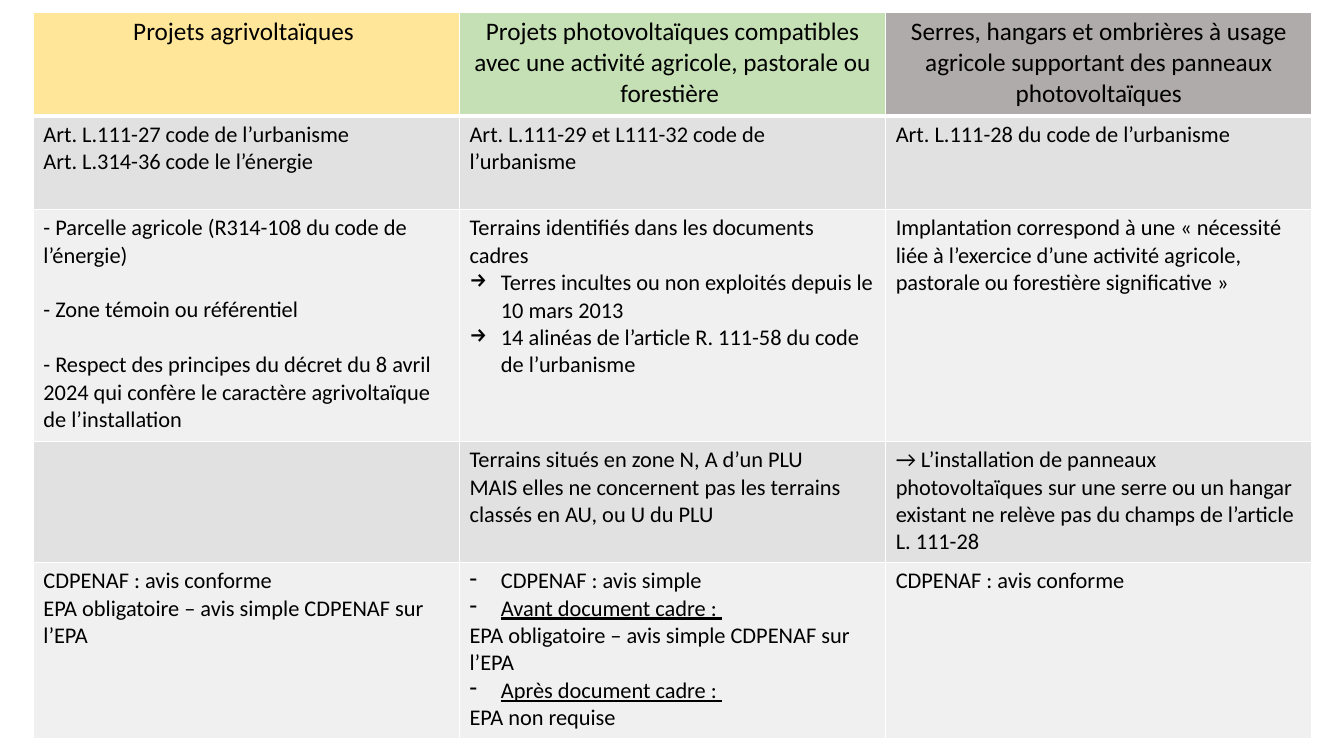
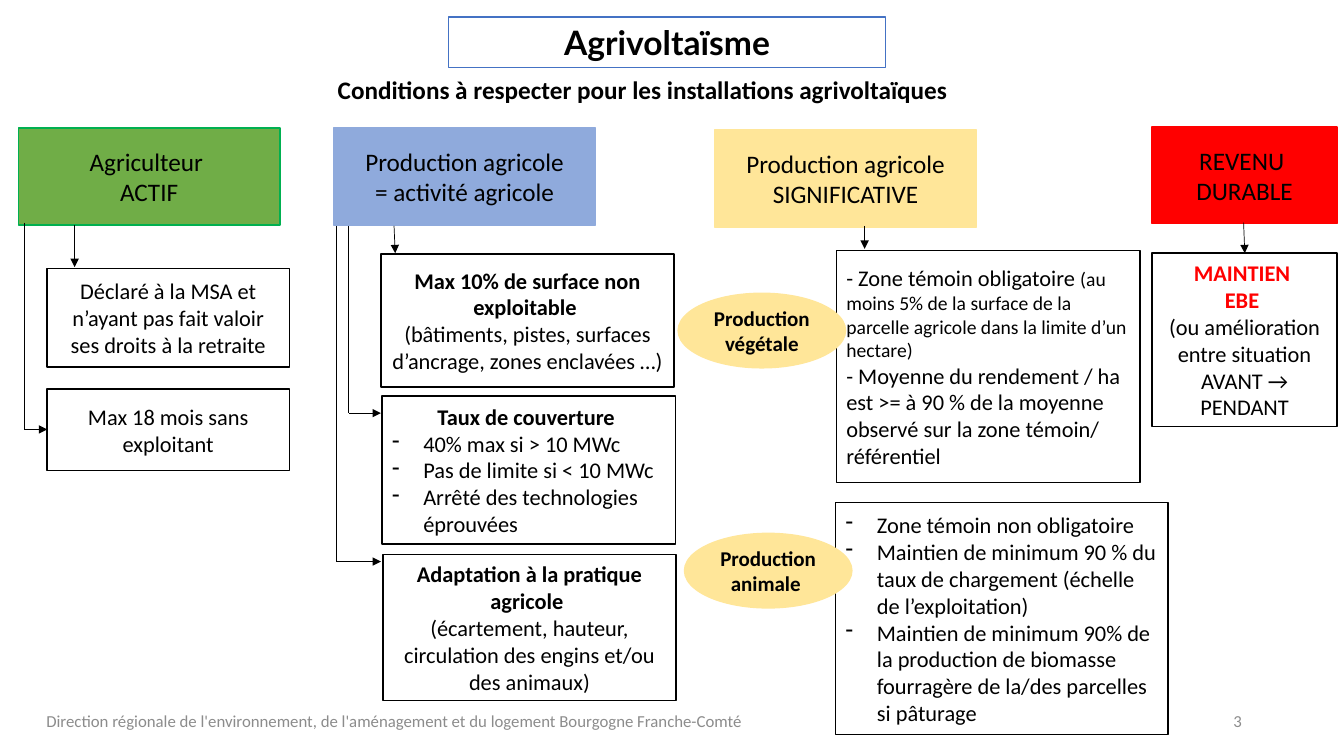
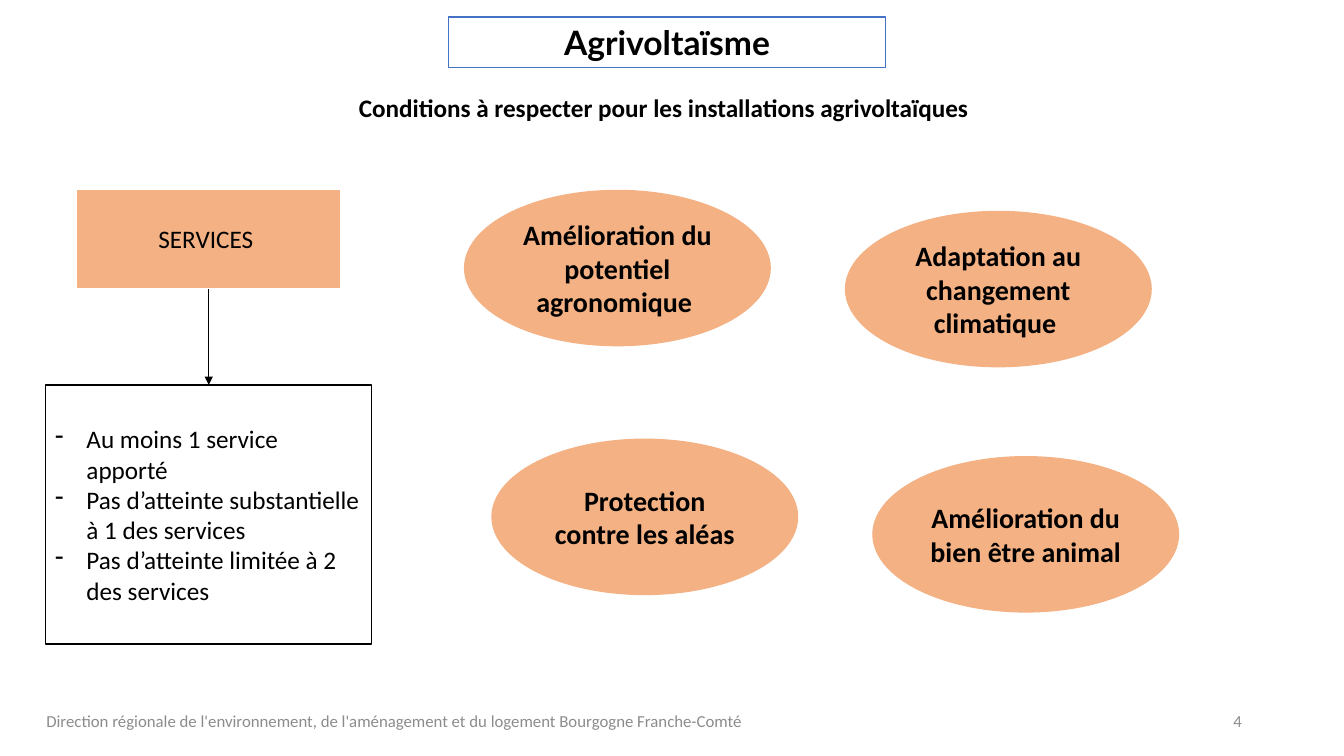
from dataclasses import dataclass
from itertools import pairwise

from lxml import etree
from pptx import Presentation
from pptx.dml.color import RGBColor
from pptx.enum import shapes, text
from pptx.oxml import ns
from pptx.util import Cm, Pt


@dataclass(frozen=True)
class Theme:
    font: str = "Calibri"
    title_font: str = "Lato"
    black: str = "000000"
    white: str = "FFFFFF"
    muted: str = "8C8C8C"
    blue: str = "4472C4"
    green: str = "70AD47"
    green_line: str = "00B050"
    sky: str = "8FAADC"
    yellow: str = "FFE699"
    red: str = "FF0000"
    orange: str = "F4B183"
    headers: tuple = ("FFE699", "C5E0B4", "AFABAB")
    bands: tuple = ("E1E1E1", "F0F0F0")
    title: int = 24
    service: int = 20
    head: int = 18
    body: int = 16
    oval: int = 15
    detail: int = 14
    footer: int = 12


T = Theme()
RECT, OVAL = shapes.MSO_SHAPE.RECTANGLE, shapes.MSO_SHAPE.OVAL
CENTER, LEFT, RIGHT = text.PP_ALIGN.CENTER, text.PP_ALIGN.LEFT, text.PP_ALIGN.RIGHT
TOP, MIDDLE = text.MSO_ANCHOR.TOP, text.MSO_ANCHOR.MIDDLE

# A paragraph is a string, or a pair of a string and its own format.
DASH = {"bullet": "-", "align": LEFT}
ARROW = {"bullet": "→"}
BOLD = {"bold": True}
GAP = {"before": 19.5}
ALERT = {"bold": True, "color": T.red}

TITLE = "Agrivoltaïsme"
SUBTITLE = "Conditions à respecter pour les installations agrivoltaïques "
FOOTER = ("Direction régionale de l'environnement, de l'aménagement et du logement "
          "Bourgogne Franche-Comté")

TABLE_AT = (0.84, 0.3)
COLUMN_WIDTH = 10.74
ROW_HEIGHTS = (2.62, 2.36, 5.84, 3.05, 4.45)
ROWS = [
    [["Projets agrivoltaïques "],
     ["Projets photovoltaïques compatibles avec une activité agricole, pastorale ou forestière "],
     ["Serres, hangars et ombrières à usage agricole supportant des panneaux photovoltaïques"]],
    [["Art. L.111-27 code de l’urbanisme", "Art. L.314-36 code le l’énergie"],
     ["Art. L.111-29 et L111-32 code de l’urbanisme"],
     ["Art. L.111-28 du code de l’urbanisme"]],
    [["- Parcelle agricole (R314-108 du code de l’énergie)",
      ("- Zone témoin ou référentiel", GAP),
      ("- Respect des principes du décret du 8 avril 2024 qui confère le caractère "
       "agrivoltaïque de l’installation", GAP)],
     ["Terrains identifiés dans les documents cadres",
      ("Terres incultes ou non exploités depuis le 10 mars 2013", ARROW),
      ("14 alinéas de l’article R. 111-58 du code de l’urbanisme", ARROW)],
     ["Implantation correspond à une « nécessité liée à l’exercice d’une activité "
      "agricole, pastorale ou forestière significative »"]],
    [[],
     ["Terrains situés en zone N, A d’un PLU",
      "MAIS elles ne concernent pas les terrains classés en AU, ou U du PLU"],
     ["→ L’installation de panneaux photovoltaïques sur une serre ou un hangar existant "
      "ne relève pas du champs de l’article L. 111-28"]],
    [["CDPENAF : avis conforme", "EPA obligatoire – avis simple CDPENAF sur l’EPA"],
     [("CDPENAF : avis simple", DASH),
      ("Avant document cadre : ", DASH | {"underline": True}),
      "EPA obligatoire – avis simple CDPENAF sur l’EPA",
      ("Après document cadre : ", DASH | {"underline": True}),
      "EPA non requise"],
     ["CDPENAF : avis conforme"]],
]

HEAD_W, HEAD_H = 6.6, 2.44
# Place, fill, line, paragraphs
CONDITION_HEADS = [
    ((0.46, 3.23, HEAD_W, HEAD_H), T.green, T.green_line, ["Agriculteur ", "ACTIF"]),
    ((8.41, 3.23, HEAD_W, HEAD_H), T.sky, T.sky,
     ["Production agricole", "= activité agricole"]),
    ((18.01, 3.28, HEAD_W, HEAD_H), T.yellow, T.yellow,
     ["Production agricole SIGNIFICATIVE"]),
    ((29.03, 3.2, 4.67, HEAD_H), T.red, T.red, ["REVENU ", "DURABLE"]),
]
# Place, alignment, paragraphs
CONDITION_BOXES = [
    ((1.19, 6.76, 6.1, 2.49), CENTER,
     ["Déclaré à la MSA et n’ayant pas fait valoir ses droits à la retraite"]),
    ((1.19, 9.8, 6.1, 2.06), CENTER, ["Max 18 mois sans exploitant"]),
    ((9.6, 6.4, 7.39, 3.35), CENTER,
     [("Max 10% de surface non exploitable ", BOLD),
      "(bâtiments, pistes, surfaces d’ancrage, zones enclavées …)"]),
    ((9.63, 9.98, 7.39, 3.73), CENTER,
     [("Taux de couverture ", BOLD),
      ("40% max si > 10 MWc", DASH),
      ("Pas de limite si < 10 MWc", DASH),
      ("Arrêté des technologies éprouvées", DASH)]),
    ((9.65, 13.97, 7.39, 3.68), CENTER,
     [("Adaptation à la pratique agricole ", BOLD),
      "(écartement, hauteur, circulation des engins et/ou des animaux)"]),
    ((21.08, 6.32, 7.65, 5.84), LEFT,
     [("- Zone témoin obligatoire ",
       {"detail": "(au moins 5% de la surface de la parcelle agricole dans la limite "
                  "d’un hectare)"}),
      "- Moyenne du rendement / ha est >= à 90 % de la moyenne observé sur la zone "
      "témoin/ référentiel"]),
    ((21.06, 12.67, 8.38, 5.84), LEFT,
     [("Zone témoin non obligatoire", DASH),
      ("Maintien de minimum 90 % du taux de chargement (échelle de l’exploitation)", DASH),
      ("Maintien de minimum 90% de la production de biomasse fourragère de la/des "
       "parcelles si pâturage", DASH)]),
    ((29.03, 6.38, 4.67, 4.37), CENTER,
     [("MAINTIEN ", ALERT), ("EBE ", ALERT),
      "(ou amélioration entre situation AVANT → PENDANT"]),
]
PRODUCTION_OVALS = [
    ((17.09, 7.39, 4.22, 1.88), ["Production", "végétale"]),
    ((17.25, 13.44, 4.22, 1.88), ["Production ", "animale "]),
]
CONDITION_ARROWS = [
    [(1.88, 5.66), (1.88, 6.73)],
    [(0.61, 5.61), (0.61, 10.82), (1.19, 10.82)],
    [(9.93, 5.69), (9.96, 6.38)],
    [(8.79, 5.69), (8.79, 10.41), (9.6, 10.41)],
    [(8.48, 5.69), (8.48, 14.15), (9.6, 14.15)],
    [(21.79, 5.69), (21.79, 6.27)],
    [(31.34, 5.61), (31.37, 6.38)],
]

SERVICES_HEAD = (1.96, 4.8, HEAD_W, HEAD_H)
SERVICES_BOX = (1.14, 9.7, 8.23, 6.53)
SERVICES_ARROW = [(5.26, 7.29), (5.26, 9.7)]
SERVICES_RULES = ["Au moins 1 service apporté",
                  "Pas d’atteinte substantielle à 1 des services",
                  "Pas d’atteinte limitée à 2 des services"]
SERVICE_SIZE = (7.7, 3.91)
SERVICES = [
    ((11.71, 4.8), "Amélioration du potentiel agronomique "),
    ((21.31, 5.33), "Adaptation au changement climatique "),
    ((12.4, 11.07), "Protection contre les aléas"),
    ((22, 11.51), "Amélioration du bien être animal "),
]


def rgb(color):
    return RGBColor.from_string(color)


def cm(values):
    return [Cm(v) for v in values]


def sub(parent, tag, **attrs):
    return etree.SubElement(parent, ns.qn(tag), attrs)


def add_run(p, content, size, font, color, bold, underline):
    r = p.add_run()
    r.text = content
    r.font.size, r.font.name = Pt(size), font
    r.font.bold, r.font.underline = bold, underline
    r.font.color.rgb = rgb(color)


def write(tf, paragraphs, anchor=MIDDLE, **base):
    """Fill a text frame; base is the format a paragraph may override."""
    tf.word_wrap = True
    tf.vertical_anchor = anchor
    for i, item in enumerate(paragraphs):
        content, own = (item, {}) if isinstance(item, str) else item
        f = {"size": T.body, "font": T.font, "color": T.black, "bold": False,
             "underline": False, "align": LEFT} | base | own
        p = tf.paragraphs[0] if i == 0 else tf.add_paragraph()
        p.alignment = f["align"]
        if "before" in f:
            p.space_before = Pt(f["before"])
        if "bullet" in f:
            pPr = p._p.get_or_add_pPr()
            pPr.set("marL", str(Cm(0.79)))
            pPr.set("indent", str(-Cm(0.79)))
            sub(pPr, "a:buChar", char=f["bullet"])
        look = {k: f[k] for k in ("font", "color", "bold", "underline")}
        add_run(p, content, f["size"], **look)
        if "detail" in f:
            add_run(p, f["detail"], T.detail, **look)


def add_text(s, at, content, **fmt):
    write(s.shapes.add_textbox(*cm(at)).text_frame, [content], **fmt)


def add_box(s, at, paragraphs, kind=RECT, fill=T.white, line=T.black, **fmt):
    sp = s.shapes.add_shape(kind, *cm(at))
    sp.shadow.inherit = False
    sp.fill.solid()
    sp.fill.fore_color.rgb = rgb(fill)
    sp.line.color.rgb = rgb(line)
    sp.line.width = Pt(1)
    write(sp.text_frame, paragraphs, **{"align": CENTER} | fmt)


def add_arrow(s, points):
    """Join the points with straight lines; the last one carries the arrowhead."""
    for start, end in pairwise(points):
        c = s.shapes.add_connector(shapes.MSO_CONNECTOR.STRAIGHT, *cm(start + end))
        c.line.color.rgb = rgb(T.black)
        c.line.width = Pt(0.5)
        if end == points[-1]:
            sub(c.line._get_or_add_ln(), "a:tailEnd", type="triangle")
        sub(c._element.spPr, "a:effectLst")


def add_borders(cell, bottom):
    tcPr = cell._tc.get_or_add_tcPr()
    for side, width in (("L", 1), ("R", 1), ("T", 1), ("B", bottom)):
        ln = sub(tcPr, f"a:ln{side}", w=str(Pt(width)))
        sub(sub(ln, "a:solidFill"), "a:srgbClr", val=T.white)


def new_slide(prs):
    return prs.slides.add_slide(prs.slide_layouts[6])


def titled_slide(prs, number, subtitle_at):
    s = new_slide(prs)
    footer = {"size": T.footer, "color": T.muted}
    add_text(s, (0.89, 17.65, 18.11, 1.02), FOOTER, align=CENTER, **footer)
    add_text(s, (23.93, 17.65, 7.62, 1.02), str(number), align=RIGHT, **footer)
    add_box(s, (11.3, 0.43, 11.02, 1.27), [TITLE], line=T.blue, anchor=TOP,
            size=T.title, font=T.title_font, bold=True)
    add_text(s, (*subtitle_at, 30.4, 1.02), SUBTITLE, anchor=TOP, align=CENTER,
             size=T.head, bold=True)
    return s


def comparison_slide(prs):
    s = new_slide(prs)
    columns = len(ROWS[0])
    size = (columns * COLUMN_WIDTH, sum(ROW_HEIGHTS))
    table = s.shapes.add_table(len(ROWS), columns, *cm(TABLE_AT + size)).table
    table.first_row = table.horz_banding = False
    for column in table.columns:
        column.width = Cm(COLUMN_WIDTH)
    for i, (row, height) in enumerate(zip(ROWS, ROW_HEIGHTS)):
        table.rows[i].height = Cm(height)
        header = i == 0
        fmt = {"size": T.head, "align": CENTER} if header else {}
        for j, paragraphs in enumerate(row):
            cell = table.cell(i, j)
            add_borders(cell, bottom=3 if header else 1)
            cell.fill.solid()
            cell.fill.fore_color.rgb = rgb(T.headers[j] if header else T.bands[(i - 1) % 2])
            write(cell.text_frame, paragraphs, anchor=None, **fmt)


def conditions_slide(prs):
    s = titled_slide(prs, 3, (1.07, 1.75))
    for at, fill, line, paragraphs in CONDITION_HEADS:
        add_box(s, at, paragraphs, fill=fill, line=line, size=T.head)
    for at, align, paragraphs in CONDITION_BOXES:
        add_box(s, at, paragraphs, align=align)
    for at, paragraphs in PRODUCTION_OVALS:
        add_box(s, at, paragraphs, kind=OVAL, fill=T.yellow, line=T.yellow,
                size=T.oval, bold=True)
    for points in CONDITION_ARROWS:
        add_arrow(s, points)


def services_slide(prs):
    s = titled_slide(prs, 4, (1.6, 2.21))
    orange = {"fill": T.orange, "line": T.orange}
    add_arrow(s, SERVICES_ARROW)
    add_box(s, SERVICES_BOX, [(rule, DASH) for rule in SERVICES_RULES], size=T.head)
    add_box(s, SERVICES_HEAD, ["SERVICES "], size=T.head, **orange)
    for place, name in SERVICES:
        add_box(s, place + SERVICE_SIZE, [name], kind=OVAL, size=T.service,
                bold=True, **orange)


def main():
    prs = Presentation()
    prs.slide_width, prs.slide_height = cm((33.87, 19.05))
    comparison_slide(prs)
    conditions_slide(prs)
    services_slide(prs)
    prs.save("out.pptx")


if __name__ == "__main__":
    main()
